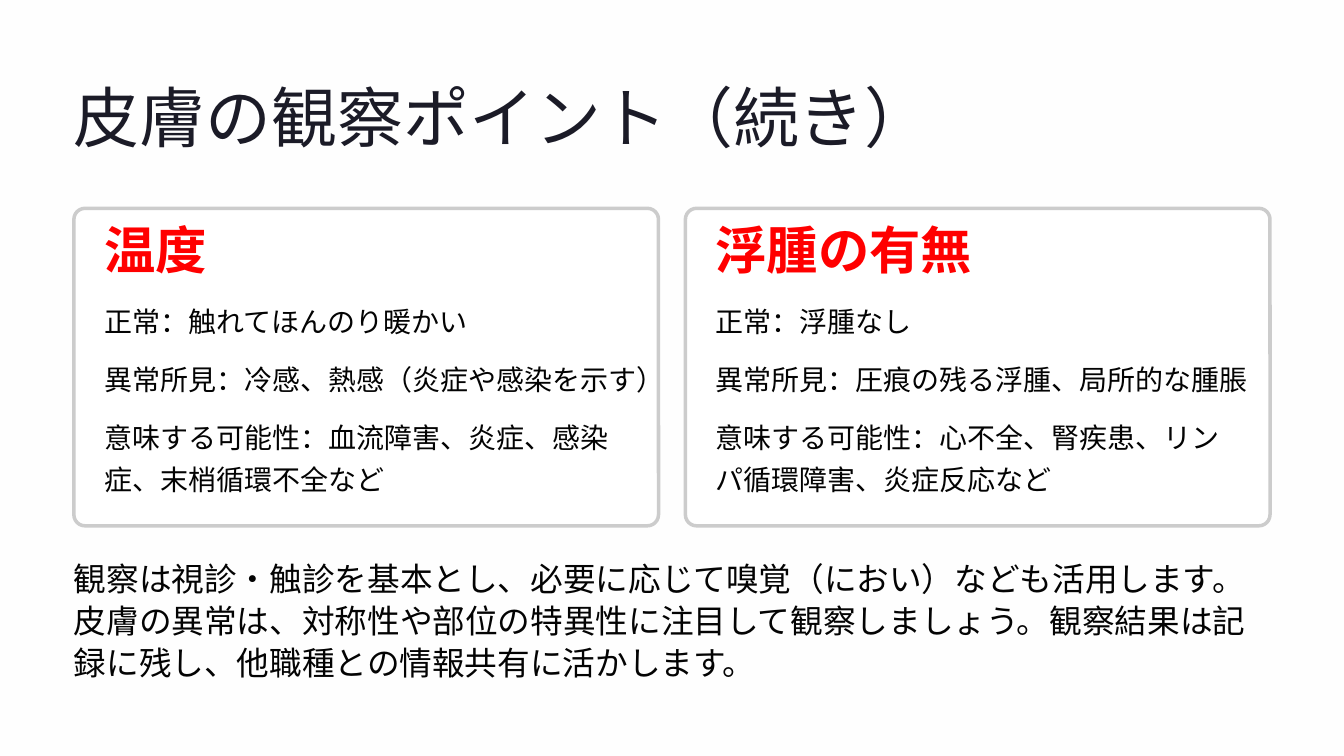
from dataclasses import dataclass

from pptx import Presentation
from pptx.dml.color import RGBColor as RGB
from pptx.enum.shapes import MSO_SHAPE as SHAPE
from pptx.enum.text import MSO_ANCHOR as ANCHOR, MSO_AUTO_SIZE as AUTO, PP_ALIGN as ALIGN
from pptx.util import Inches, Pt


@dataclass(frozen=True)
class TextStyle:
    font: str
    size: float
    color: str
    leading: float
    bold: bool = False


@dataclass(frozen=True)
class Theme:
    background: str = "FEFEFE"
    card: str = "FFFFFF"
    border: str = "CCCCCC"
    title: TextStyle = TextStyle("Inter", 56.5, "1B1B27", 70.5)
    heading: TextStyle = TextStyle("Inter", 44, "FF0000", 35, True)
    detail: TextStyle = TextStyle("Lato", 24, "030303", 36)
    summary: TextStyle = TextStyle("Lato", 28, "030303", 36)


class SlideBuilder:
    def __init__(self, prs, theme):
        self.theme = theme
        self.slide = prs.slides.add_slide(prs.slide_layouts[5])
        fill = self.slide.background.fill
        fill.solid()
        fill.fore_color.rgb = RGB.from_string(theme.background)

    def set_text(self, s, text, style, wrap):
        tf = s.text_frame
        tf.margin_left = tf.margin_right = tf.margin_top = tf.margin_bottom = 0
        tf.auto_size = AUTO.NONE
        tf.vertical_anchor = ANCHOR.TOP
        tf.word_wrap = wrap
        p = tf.paragraphs[0]
        p.alignment = ALIGN.LEFT
        p.line_spacing = Pt(style.leading)
        r = p.add_run()
        r.text = text
        r.font.name = style.font
        r.font.size = Pt(style.size)
        r.font.bold = style.bold
        r.font.color.rgb = RGB.from_string(style.color)

    def title(self, text, x, y, w, h):
        s = self.slide.shapes.title
        s.left, s.top, s.width, s.height = map(Inches, (x, y, w, h))
        self.set_text(s, text, self.theme.title, wrap=False)

    def text(self, text, style, x, y, w, h, wrap=False):
        s = self.slide.shapes.add_textbox(*map(Inches, (x, y, w, h)))
        self.set_text(s, text, style, wrap)

    def panel(self, x, y, w, h):
        s = self.slide.shapes.add_shape(SHAPE.ROUNDED_RECTANGLE, *map(Inches, (x, y, w, h)))
        s.adjustments[0] = 0.035
        s.shadow.inherit = False
        s.fill.solid()
        s.fill.fore_color.rgb = RGB.from_string(self.theme.card)
        s.line.color.rgb = RGB.from_string(self.theme.border)
        s.line.width = Pt(3)

    def card(self, x, heading, details):
        """Draw a panel with a heading and details, the last of which takes two lines."""
        top, pad = 2.48, 0.36
        self.panel(x, top, 6.96, 3.78)
        self.text(heading, self.theme.heading, x + pad, top + pad, 3.93, 0.49)
        last = len(details) - 1
        for i, detail in enumerate(details):
            self.text(detail, self.theme.detail, x + pad, 3.52 + 0.69 * i, 6.25,
                      1.01 if i == last else 0.5, wrap=i == last)


MARGIN = 0.88
CARD_STEP = 7.28
CARDS = [
    ("温度", [
        "正常：触れてほんのり暖かい",
        "異常所見：冷感、熱感（炎症や感染を示す）",
        "意味する可能性：血流障害、炎症、感染症、末梢循環不全など",
    ]),
    ("浮腫の有無", [
        "正常：浮腫なし",
        "異常所見：圧痕の残る浮腫、局所的な腫脹",
        "意味する可能性：心不全、腎疾患、リンパ循環障害、炎症反応など",
    ]),
]
SUMMARY = (
    "観察は視診・触診を基本とし、必要に応じて嗅覚（におい）なども活用します。"
    "皮膚の異常は、対称性や部位の特異性に注目して観察しましょう。"
    "観察結果は記録に残し、他職種との情報共有に活かします。"
)


def main():
    prs = Presentation()
    prs.slide_width, prs.slide_height = Inches(16), Inches(9)
    theme = Theme()
    builder = SlideBuilder(prs, theme)
    builder.title("皮膚の観察ポイント（続き）", MARGIN, 0.87, 10.22, 0.98)
    for i, (heading, details) in enumerate(CARDS):
        builder.card(MARGIN + CARD_STEP * i, heading, details)
    builder.text(SUMMARY, theme.summary, MARGIN, 6.62, 14.24, 1.51, wrap=True)
    prs.save("out.pptx")


if __name__ == "__main__":
    main()
